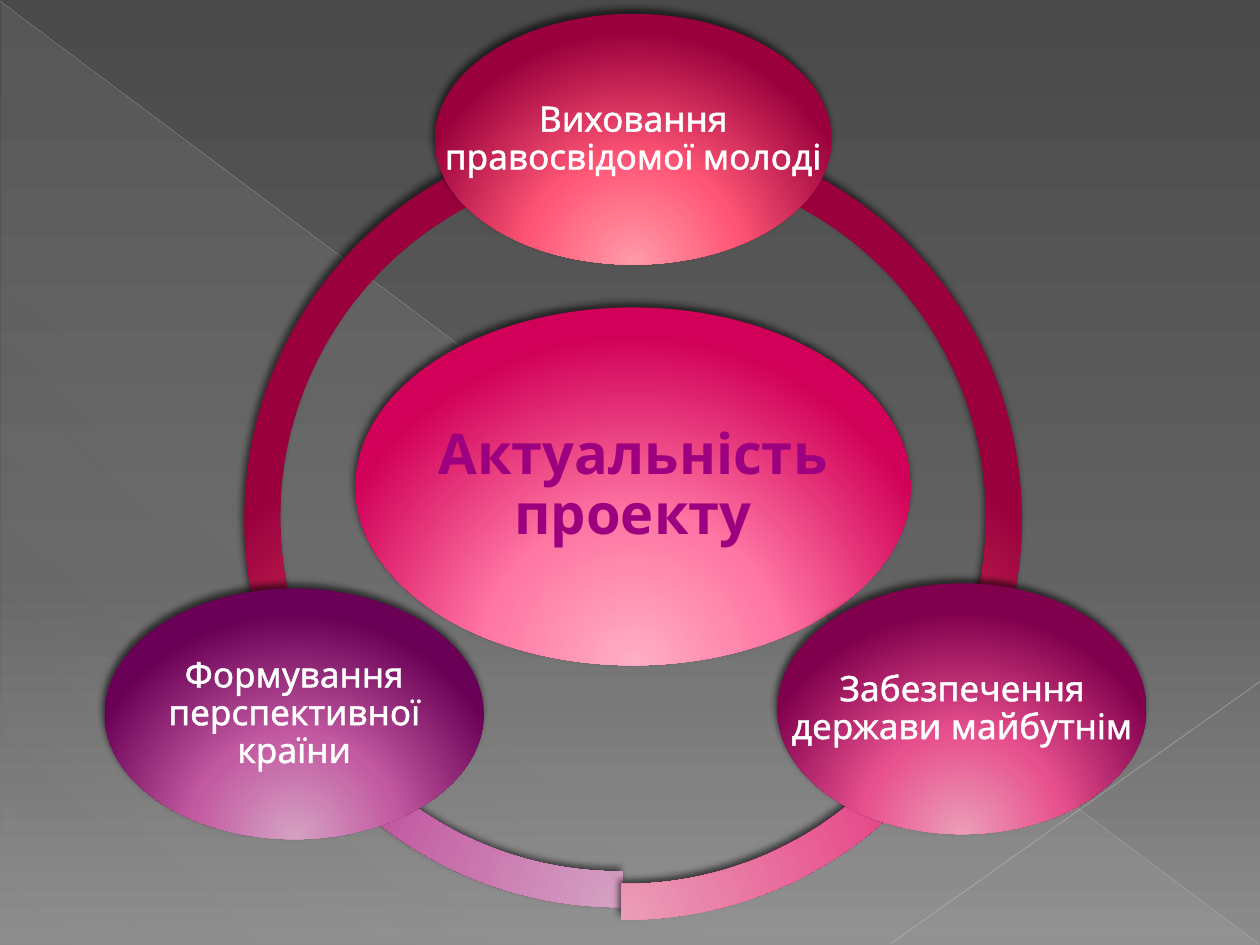
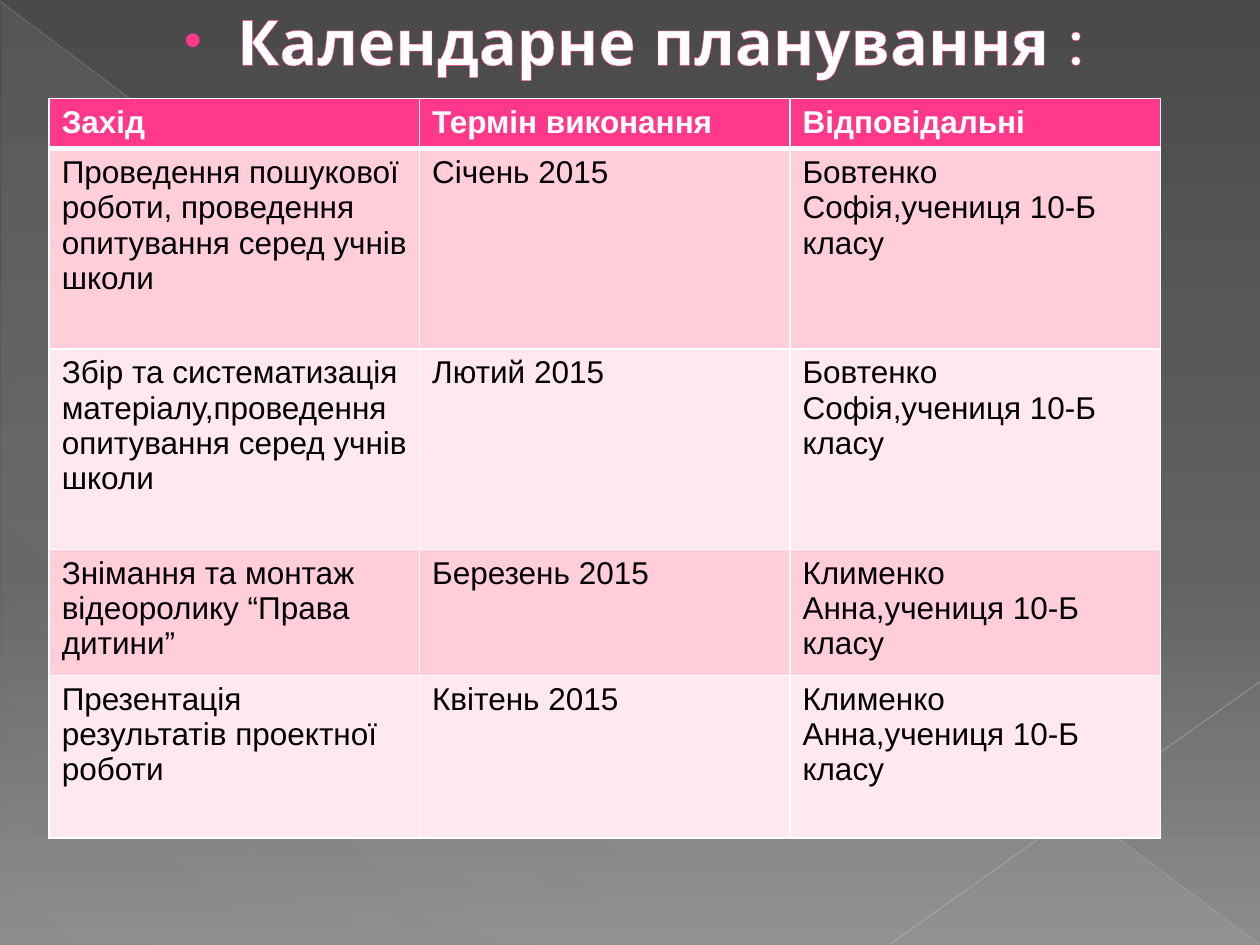
from lxml.etree import SubElement
from pptx import Presentation
from pptx.dml.color import RGBColor
from pptx.enum.shapes import MSO_CONNECTOR, MSO_SHAPE
from pptx.enum.text import MSO_ANCHOR, PP_ALIGN
from pptx.oxml.ns import qn
from pptx.util import Inches, Pt

WHITE, BLACK, PINK, PURPLE = "FFFFFF", "000000", "FF388C", "9C007F"
ROW_TINTS = ["FFCEDA", "FFE8EE"]
TITLE_FONT, TABLE_FONT = "Quicksand", "Arial"
BACKDROP = [(0, "4A4A4A", 100), (60, "626262", 100), (100, "8C8C8C", 100)]
SHEEN = [(0, "D2D2D2", 10), (70, "D2D2D2", 8), (100, "D2D2D2", 1)]


def glow(inner, middle, outer):
    """Return the stops of a glossy radial gradient."""
    return [(0, inner, 100), (46, middle, 100), (100, outer, 100)]


VIOLET = glow("D5A2C3", "C259A1", "690055")
MAGENTA = glow("EB9DB8", "E7508D", "81004E")
CRIMSON = glow("FF9BA9", "FF5575", "99003C")
ROSE = glow("FFAFC5", "FF75A3", "D10058")

ARCS = [
    (1.83, 1.03, 89.42, 163.18, VIOLET),
    (1.88, 1.13, 16.82, 90.64, MAGENTA),
    (1.94, 1.03, 162, 18, CRIMSON),
]
GOALS = [
    (3.45, 0.11, 3.15, "Виховання правосвідомої молоді", CRIMSON),
    (6.17, 4.63, 2.93, "Забезпечення держави майбутнім", MAGENTA),
    (0.83, 4.67, 3.01, "Формування перспективної країни", VIOLET),
]
SOFIA = "Бовтенко Софія,учениця 10-Б класу"
ANNA = "Клименко Анна,учениця 10-Б класу"
PLAN = [
    ("Захід", "Термін виконання", "Відповідальні"),
    ("Проведення пошукової роботи, проведення опитування серед учнів школи",
     "Січень 2015", SOFIA),
    ("Збір та систематизація матеріалу,проведення опитування серед учнів школи",
     "Лютий 2015", SOFIA),
    ("Знімання та монтаж відеоролику “Права дитини”", "Березень 2015", ANNA),
    ("Презентація результатів проектної роботи", "Квітень 2015", ANNA),
]
ROW_HEIGHTS = [0.4, 1.59, 1.59, 0.99, 1.29]


def color(value):
    """Turn a hex string into a colour."""
    return RGBColor.from_string(value)


def add_node(parent, tag, **attributes):
    """Append an XML element with the given attributes."""
    return SubElement(parent, qn(tag), {key: str(value) for key, value in attributes.items()})


def add_color(parent, value, opacity=100):
    """Append a colour element, translucent when opacity is below 100."""
    node = add_node(parent, "a:srgbClr", val=value)
    if opacity < 100:
        add_node(node, "a:alpha", val=opacity * 1000)


def set_gradient(properties, stops, angle=None):
    """Replace a solid fill by a linear gradient, or a radial one without angle."""
    solid = properties.find(qn("a:solidFill"))
    gradient = add_node(properties, "a:gradFill", rotWithShape=1)
    stop_list = add_node(gradient, "a:gsLst")
    for position, value, opacity in stops:
        add_color(add_node(stop_list, "a:gs", pos=position * 1000), value, opacity)
    if angle is None:
        circle = add_node(gradient, "a:path", path="circle")
        add_node(circle, "a:fillToRect", l=50000, t=155000, r=50000, b=-55000)
    else:
        add_node(gradient, "a:lin", ang=angle * 60000, scaled=0)
    properties.replace(solid, gradient)


def add_figure(page, kind, left, top, width, height, stops, angle=None):
    """Add a borderless preset shape with a gradient fill."""
    figure = page.shapes.add_shape(
        kind, Inches(left), Inches(top), Inches(width), Inches(height))
    figure.shadow.inherit = False
    figure.line.fill.background()
    figure.fill.solid()
    set_gradient(figure.element.spPr, stops, angle)
    return figure


def add_shadow(figure):
    """Give a shape the soft shadow of the diagram."""
    effects = figure.element.spPr.find(qn("a:effectLst"))
    shadow = add_node(effects, "a:outerShdw", blurRad=Pt(4), dist=Pt(3),
                      dir=245 * 60000, rotWithShape=0)
    add_color(shadow, BLACK, 60)


def add_ray(page, start, end, value, width, opacity):
    """Add a thin translucent background line."""
    ray = page.shapes.add_connector(
        MSO_CONNECTOR.STRAIGHT, *[Inches(part) for part in start + end])
    ray.line.color.rgb = color(value)
    ray.line.width = Pt(width)
    add_node(ray.element.spPr.find(".//" + qn("a:srgbClr")), "a:alpha", val=opacity * 1000)
    add_node(ray.element.spPr, "a:effectLst")


def add_page(deck):
    """Add a blank page with the shared backdrop."""
    page = deck.slides.add_slide(deck.slide_layouts[6])
    page.background.fill.solid()
    set_gradient(page.element.find(".//" + qn("p:bgPr")), BACKDROP, 90)
    add_figure(page, MSO_SHAPE.RIGHT_TRIANGLE, 0.01, 0.02, 9.99, 7.48, SHEEN, 133)
    add_ray(page, (0, 0.01), (9.99, 7.49), "BFBFBF", 0.39, 35)
    add_ray(page, (10, 5.41), (7.07, 7.49), "C6C6C6", 0.47, 45)
    return page


def style_span(span, font, size, value, bold=False):
    """Set font, size, colour and weight of a run."""
    span.font.name = font
    span.font.size = Pt(size)
    span.font.bold = bold
    span.font.color.rgb = color(value)


def outline_span(span, value, width):
    """Draw an outline around the letters of a run."""
    properties = span._r.get_or_add_rPr()
    outline = add_node(properties, "a:ln", w=Pt(width))
    add_color(add_node(outline, "a:solidFill"), value)
    properties.insert(0, outline)


def add_label(page, left, top, width, height, text, size, value, bold, outline):
    """Add one centred paragraph in a text box and return the box."""
    box = page.shapes.add_textbox(Inches(left), Inches(top), Inches(width), Inches(height))
    frame = box.text_frame
    frame.word_wrap = True
    frame.text = text
    para = frame.paragraphs[0]
    para.alignment = PP_ALIGN.CENTER
    style_span(para.runs[0], TITLE_FONT, size, value, bold)
    outline_span(para.runs[0], *outline)
    return box


def add_bubble(page, left, top, width, height, text, stops,
               size=20, value=WHITE, bold=False, inset=0.03):
    """Add a glossy ellipse with a label across its full width."""
    bounds = (left, top, width, height)
    add_shadow(add_figure(page, MSO_SHAPE.OVAL, *bounds, stops))
    frame = add_label(page, *bounds, text, size, value, bold, (WHITE, 1.45)).text_frame
    frame.vertical_anchor = MSO_ANCHOR.MIDDLE
    frame.margin_left = frame.margin_right = Inches(inset)
    frame.margin_top = frame.margin_bottom = Inches(inset)
    frame.paragraphs[0].line_spacing = 0.9
    frame.paragraphs[0].space_after = Pt(size * 0.35)


def add_arc(page, left, top, start, end, stops):
    """Add one section of the ring between two angles in degrees."""
    arc = add_figure(page, MSO_SHAPE.BLOCK_ARC, left, top, 6.17, 6.17, stops)
    for index, adjustment in enumerate([start * 0.6, end * 0.6, 0.046]):
        arc.adjustments[index] = adjustment
    add_shadow(arc)


def add_title(page, text):
    """Add the bulleted page title."""
    box = add_label(page, 0.5, -0.03, 9, 5, text, 36, WHITE, True, (PINK, 0.8))
    para = box.text_frame.paragraphs[0]
    para.space_before = Pt(7.2)
    properties = para._p.get_or_add_pPr()
    properties.set("marL", str(Inches(0.49)))
    properties.set("indent", str(Inches(-0.42)))
    add_color(add_node(properties, "a:buClr"), PINK)
    add_node(properties, "a:buSzPct", val=80000)
    add_node(properties, "a:buFont", typeface="Arial")
    add_node(properties, "a:buChar", char="•")


def set_borders(cell, top, bottom):
    """Draw white cell borders, with given top and bottom widths."""
    properties = cell._tc.get_or_add_tcPr()
    sides = [("a:lnL", 1), ("a:lnR", 1), ("a:lnT", top), ("a:lnB", bottom)]
    for index, (tag, width) in enumerate(sides):
        border = add_node(properties, tag, w=Pt(width))
        add_color(add_node(border, "a:solidFill"), WHITE)
        properties.insert(index, border)


def add_plan(page, rows):
    """Add the calendar table with a pink header and banded rows."""
    table = page.shapes.add_table(
        len(rows), 3, Inches(0.39), Inches(0.78), Inches(8.83), Inches(sum(ROW_HEIGHTS))).table
    for column in table.columns:
        column.width = Inches(2.94)
    for number, (texts, height) in enumerate(zip(rows, ROW_HEIGHTS)):
        table.rows[number].height = Inches(height)
        header = number == 0
        for cell, text in zip(table.rows[number].cells, texts):
            cell.text = text
            cell.fill.solid()
            cell.fill.fore_color.rgb = color(PINK if header else ROW_TINTS[(number - 1) % 2])
            style_span(cell.text_frame.paragraphs[0].runs[0], TABLE_FONT, 18,
                       WHITE if header else BLACK, header)
            set_borders(cell, 3 if number == 1 else 1, 3 if header else 1)


def build_relevance(deck):
    """Build the ring of project goals."""
    page = add_page(deck)
    for arc in ARCS:
        add_arc(page, *arc)
    add_bubble(page, 2.82, 2.44, 4.41, 2.84, "Актуальність проекту", ROSE,
               32, PURPLE, True, 0.04)
    for left, top, width, text, stops in GOALS:
        add_bubble(page, left, top, width, 1.99, text, stops)


def build_calendar(deck):
    """Build the calendar plan."""
    page = add_page(deck)
    add_title(page, "Календарне планування :")
    add_plan(page, PLAN)


def main():
    """Build and save the deck."""
    deck = Presentation()
    deck.slide_width, deck.slide_height = Inches(10), Inches(7.5)
    build_relevance(deck)
    build_calendar(deck)
    deck.save("out.pptx")


if __name__ == "__main__":
    main()
